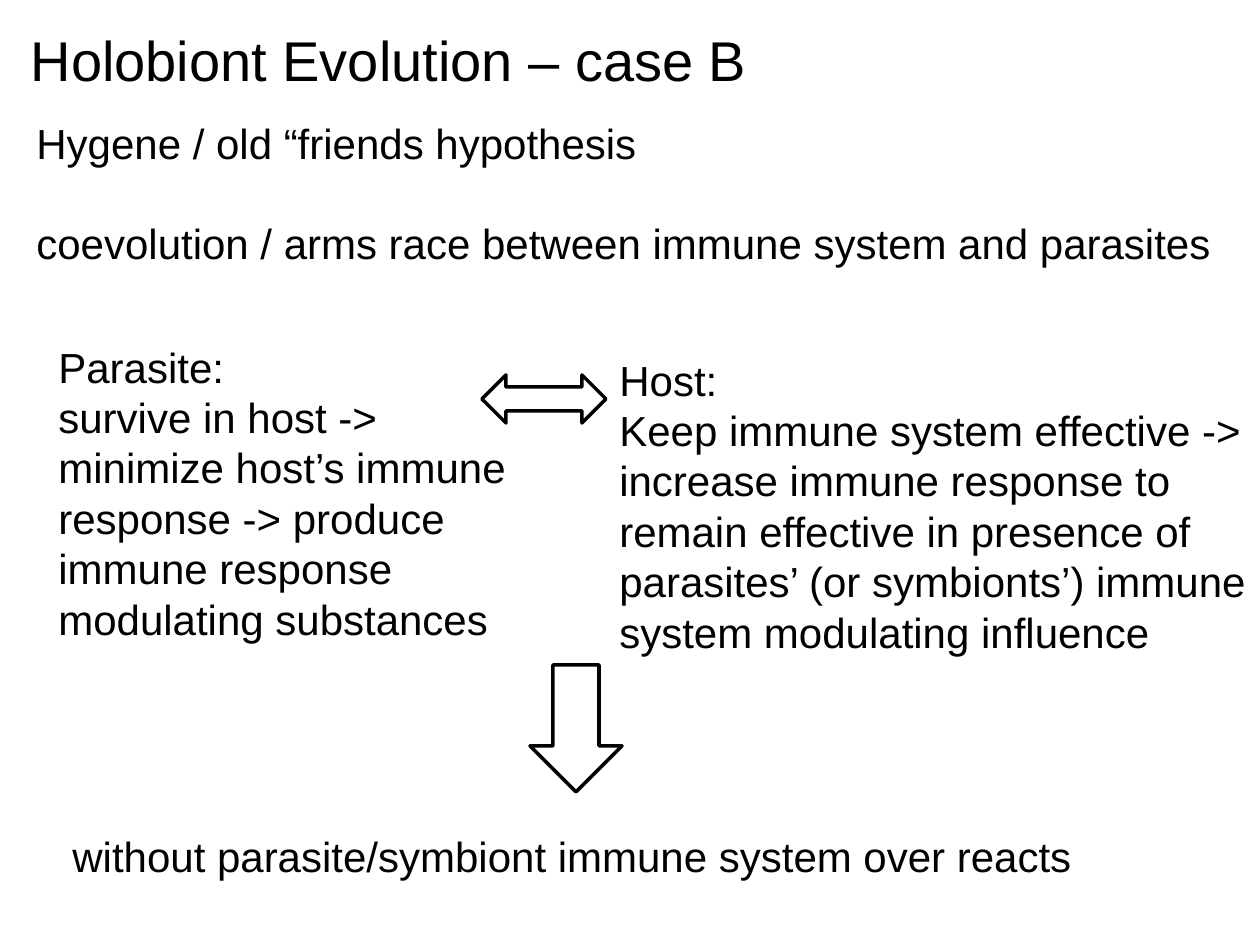
import dataclasses

import pptx
import pptx.dml.color
import pptx.enum.shapes
import pptx.enum.text
import pptx.util

SCALE = 914400 / 126
KIND = pptx.enum.shapes.MSO_SHAPE
ANCHOR = pptx.enum.text.MSO_ANCHOR
ALIGN = pptx.enum.text.PP_ALIGN


@dataclasses.dataclass
class Box:
    left: int
    top: int
    width: int
    height: int


@dataclasses.dataclass
class Note:
    box: Box
    lines: list[str]
    wrap: bool = True
    gap: float = 0


@dataclasses.dataclass
class Arrow:
    box: Box
    kind: KIND


NOTES = [
    Note(
        Box(24, 111, 1211, 267),
        [
            "Hygene / old “friends hypothesis",
            "coevolution / arms race between immune system and parasites",
        ],
        wrap=False,
        gap=28.8,
    ),
    Note(
        Box(46, 335, 519, 318),
        [
            "Parasite:",
            "survive in host -> minimize host’s immune response -> "
            "produce immune response modulating substances",
        ],
    ),
    Note(
        Box(607, 348, 653, 318),
        [
            "Host:",
            "Keep immune system effective ->\v"
            "increase immune response to remain effective in presence of "
            "parasites’ (or symbionts’) immune system modulating influence",
        ],
    ),
    Note(
        Box(60, 824, 1036, 63),
        ["without parasite/symbiont immune system over reacts"],
        wrap=False,
    ),
]

ARROWS = [
    Arrow(Box(482, 375, 124, 48), KIND.LEFT_RIGHT_ARROW),
    Arrow(Box(530, 665, 92, 127), KIND.DOWN_ARROW),
]


def px(count: int) -> int:
    return round(count * SCALE)


def color(code: str) -> pptx.dml.color.RGBColor:
    return pptx.dml.color.RGBColor.from_string(code)


def place(box: Box) -> list[int]:
    return [px(size) for size in dataclasses.astuple(box)]


def write(shape, lines: list[str], *, size: int = 24, wrap: bool = True,
          gap: float = 0, tint: str = "000000") -> None:
    frame = shape.text_frame
    frame.text = "\n".join(lines)
    frame.word_wrap = wrap
    frame.auto_size = pptx.enum.text.MSO_AUTO_SIZE.NONE
    frame.vertical_anchor = ANCHOR.TOP
    for index, para in enumerate(frame.paragraphs):
        para.alignment = ALIGN.LEFT
        para.space_before = pptx.util.Pt(gap if index else 0)
        for run in para.runs:
            run.font.name = "Arial"
            run.font.size = pptx.util.Pt(size)
            run.font.color.rgb = color(tint)


def add_note(slide, note: Note) -> None:
    shape = slide.shapes.add_textbox(*place(note.box))
    write(shape, note.lines, wrap=note.wrap, gap=note.gap)


def add_arrow(slide, arrow: Arrow) -> None:
    shape = slide.shapes.add_shape(arrow.kind, *place(arrow.box))
    shape.shadow.inherit = False
    shape.fill.solid()
    shape.fill.fore_color.rgb = color("FFFFFF")
    shape.line.color.rgb = color("000000")
    shape.line.width = pptx.util.Pt(2)


def main() -> None:
    deck = pptx.Presentation()
    deck.slide_width, deck.slide_height = px(1260), px(945)
    slide = deck.slides.add_slide(deck.slide_layouts[5])
    title = slide.shapes.title
    title.left, title.top, title.width, title.height = place(Box(18, 19, 748, 81))
    write(title, ["Holobiont Evolution – case B"], size=32, wrap=False)
    for note in NOTES:
        add_note(slide, note)
    for arrow in ARROWS:
        add_arrow(slide, arrow)
    deck.save("out.pptx")


if __name__ == "__main__":
    main()
